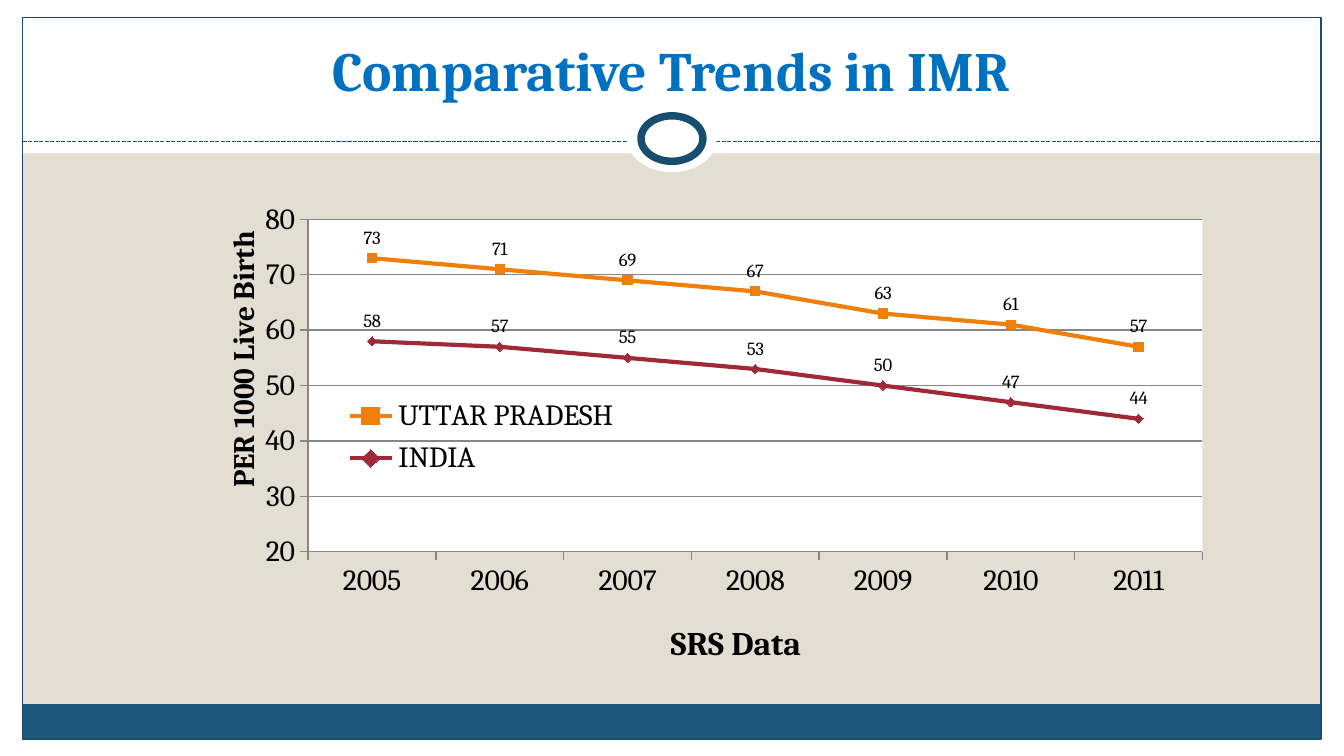
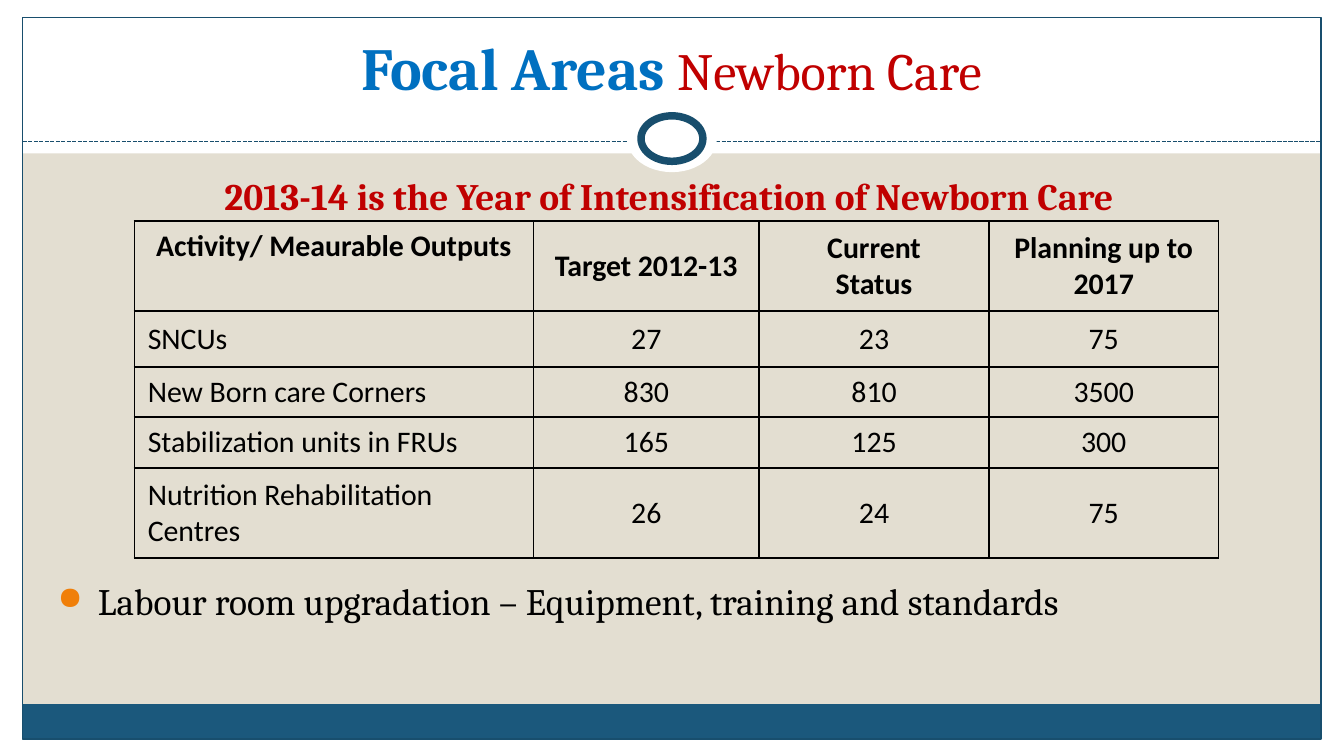
import pptx
import pptx.chart.data
import pptx.dml.color
import pptx.enum.chart
import pptx.enum.dml
import pptx.enum.shapes
import pptx.enum.text
import pptx.oxml
import pptx.oxml.ns
import pptx.util

Cm = pptx.util.Cm
Pt = pptx.util.Pt
RGB = pptx.dml.color.RGBColor
qn = pptx.oxml.ns.qn
Shape = pptx.enum.shapes.MSO_SHAPE
Align = pptx.enum.text.PP_ALIGN
Anchor = pptx.enum.text.MSO_ANCHOR

SAND = RGB(0xE3, 0xDE, 0xD1)
WHITE = RGB(0xFF, 0xFF, 0xFF)
BLACK = RGB(0, 0, 0)
GRAY = RGB(0x86, 0x86, 0x86)
TEAL = RGB(0x1B, 0x58, 0x7C)
NAVY = RGB(0x18, 0x4E, 0x6D)
BLUE = RGB(0x00, 0x70, 0xC0)
RED = RGB(0xC0, 0, 0)
ORANGE = RGB(0xF0, 0x7F, 0x09)
WINE = RGB(0x9F, 0x29, 0x36)

SERIF, SANS = "Cambria", "Calibri"
WIDTH, HEIGHT = 25.4, 14.29
EDGE = 0.43
TITLE = (0.84, 0.48, 23.7, 1.58)

YEARS = [str(year) for year in range(2005, 2012)]
RATES = [
    ("UTTAR PRADESH", (73, 71, 69, 67, 63, 61, 57), ORANGE, "SQUARE"),
    ("INDIA", (58, 57, 55, 53, 50, 47, 44), WINE, "DIAMOND"),
]
ROWS = [
    ("Activity/ Meaurable Outputs", "Target 2012-13", "Current\nStatus",
     "Planning up to 2017"),
    ("SNCUs", "27", "23", "75"),
    ("New Born care Corners", "830", "810", "3500"),
    ("Stabilization units in FRUs", "165", "125", "300"),
    ("Nutrition Rehabilitation Centres", "26", "24", "75"),
]
COLS = (7.54, 4.27, 4.34, 4.34)
TALL = (1.7, 1.06, 0.94, 0.97, 1.7)


def place(box):
    return [Cm(value) for value in box]


def style(font, size, color=BLACK, bold=False, name=SERIF):
    font.name, font.size, font.bold = name, Pt(size), bold
    font.color.rgb = color


def draw(slide, kind, box, fill=None, line=None, weight=0.75):
    shape = slide.shapes.add_shape(kind, *place(box))
    shape.shadow.inherit = False
    if fill is None:
        shape.fill.background()
    else:
        shape.fill.solid()
        shape.fill.fore_color.rgb = fill
    if line is None:
        shape.line.fill.background()
    else:
        shape.line.color.rgb = line
        shape.line.width = Pt(weight)


def rule(slide, left, right, top):
    line = slide.shapes.add_connector(
        pptx.enum.shapes.MSO_CONNECTOR.STRAIGHT,
        Cm(left), Cm(top), Cm(right), Cm(top))
    line.line.color.rgb = NAVY
    line.line.width = Pt(0.75)
    line.line.dash_style = pptx.enum.dml.MSO_LINE.SQUARE_DOT
    props = line._element.spPr
    props.append(props.makeelement(qn("a:effectLst"), {}))


def ring(slide, mid, top):
    """White disc with a navy ring, centred on the given point."""
    for wide, high, line in ((1.7, 1.27, None), (1.17, 0.86, NAVY)):
        box = (mid - wide / 2, top - high / 2, wide, high)
        draw(slide, Shape.OVAL, box, WHITE, line, 4)


def frame(slide):
    """Background, white margins, footer band, rule and ring."""
    slide.background.fill.solid()
    slide.background.fill.fore_color.rgb = SAND
    for box in ((0, HEIGHT - 0.32, WIDTH, 0.32), (0, 0, WIDTH, 2.9),
                (0, 0, EDGE, HEIGHT), (WIDTH - EDGE, 0, EDGE, HEIGHT)):
        draw(slide, Shape.RECTANGLE, box, WHITE)
    inner = WIDTH - 2 * EDGE
    draw(slide, Shape.RECTANGLE, (EDGE, 13.31, inner, 0.65), TEAL)
    draw(slide, Shape.RECTANGLE, (EDGE, 0.33, inner, 13.64), line=NAVY)
    rule(slide, EDGE, WIDTH - EDGE, 2.67)
    ring(slide, WIDTH / 2, 2.62)


def write(slide, box, runs, align=Align.CENTER, anchor=Anchor.TOP, dot=None):
    """One paragraph of (text, size, colour, bold) runs, bulleted if dot."""
    frame = slide.shapes.add_textbox(*place(box)).text_frame
    frame.word_wrap = True
    frame.vertical_anchor = anchor
    para = frame.paragraphs[0]
    para.alignment = align
    if dot is not None:
        bullet(para, dot)
    for text, *look in runs:
        run = para.add_run()
        run.text = text
        style(para.font if len(runs) == 1 else run.font, *look)


def bullet(para, color):
    props = para._p.get_or_add_pPr()
    props.set("marL", str(Cm(0.76)))
    props.set("indent", str(-Cm(0.76)))
    for tag, child, value in (("a:buClr", "a:srgbClr", str(color)),
                              ("a:buSzPct", None, "85000"),
                              ("a:buChar", None, "●")):
        item = props.makeelement(qn(tag), {})
        if child:
            item.append(props.makeelement(qn(child), {"val": value}))
        else:
            item.set("char" if tag == "a:buChar" else "val", value)
        props.append(item)


def layout(node, spot, index, inner=False):
    """Fix a chart part at fractions x, y, w, h of the chart."""
    for old in node.findall(qn("c:layout")):
        node.remove(old)
    outer = node.makeelement(qn("c:layout"), {})
    hold = node.makeelement(qn("c:manualLayout"), {})
    outer.append(hold)
    marks = [("layoutTarget", "inner")] if inner else []
    marks += [("xMode", "edge"), ("yMode", "edge")]
    marks += [(key, str(value)) for key, value in zip("xywh", spot)]
    for key, value in marks:
        hold.append(node.makeelement(qn("c:" + key), {"val": value}))
    node.insert(index, outer)


def label(axis, text, size, spot, turn=0):
    frame = axis.axis_title.text_frame
    frame.text = text
    style(frame.paragraphs[0].font, size, bold=True)
    body = frame._txBody.find(qn("a:bodyPr"))
    body.set("rot", str(turn * 60000))
    body.set("vert", "horz")
    layout(axis.axis_title._element, spot, 1)


def trend(slide, box):
    """Line chart of both rates."""
    data = pptx.chart.data.CategoryChartData()
    data.categories = YEARS
    for name, rates, *_ in RATES:
        data.add_series(name, rates)
    enum = pptx.enum.chart
    chart = slide.shapes.add_chart(
        enum.XL_CHART_TYPE.LINE_MARKERS, *place(box), data).chart
    chart.has_title = False
    style(chart.font, 10)
    for series, (_, _, color, mark) in zip(chart.plots[0].series, RATES):
        series.smooth = False
        series.format.line.color.rgb = color
        series.format.line.width = Pt(2.25)
        series.marker.style = enum.XL_MARKER_STYLE[mark]
        series.marker.size = 5
        series.marker.format.fill.solid()
        series.marker.format.fill.fore_color.rgb = color
        series.marker.format.line.color.rgb = color
        tags = series.data_labels
        tags.show_value = True
        tags.position = enum.XL_LABEL_POSITION.ABOVE
        style(tags.font, 10)
    chart.plots[0].vary_by_categories = False

    base, scale = chart.category_axis, chart.value_axis
    scale.minimum_scale, scale.maximum_scale = 20, 80
    scale.major_unit = 10
    scale.has_major_gridlines = True
    for part in (base, scale, scale.major_gridlines):
        part.format.line.color.rgb = GRAY
        part.format.line.width = Pt(0.75)
    for axis in (base, scale):
        axis.major_tick_mark = enum.XL_TICK_MARK.OUTSIDE
        style(axis.tick_labels.font, 16)
    label(base, "SRS Data", 18, (0.465, 0.89))
    label(scale, "PER 1000 Live Birth", 16, (0.027, 0.065), -90)

    chart.has_legend = True
    key = chart.legend
    key.position = enum.XL_LEGEND_POSITION.CORNER
    key.include_in_layout = True
    style(key.font, 16)
    layout(key._element, (0.14, 0.41, 0.29, 0.2), 1)

    plot = chart.element.find(".//" + qn("c:plotArea"))
    layout(plot, (0.115, 0.044, 0.878, 0.711), 0, True)
    plot.append(pptx.oxml.parse_xml(
        f'<c:spPr {pptx.oxml.ns.nsdecls("c", "a")}><a:solidFill>'
        f'<a:srgbClr val="{WHITE}"/></a:solidFill></c:spPr>'))


def border(cell):
    props = cell._tc.get_or_add_tcPr()
    for index, side in enumerate("LRTB"):
        props.insert(index, pptx.oxml.parse_xml(
            f'<a:ln{side} {pptx.oxml.ns.nsdecls("a")} w="{Pt(1)}">'
            f'<a:solidFill><a:srgbClr val="{BLACK}"/></a:solidFill>'
            f'</a:ln{side}>'))


def grid(slide, left, top):
    """Table of targets, status and plans."""
    box = place((left, top, sum(COLS), sum(TALL)))
    table = slide.shapes.add_table(len(ROWS), len(COLS), *box).table
    table.first_row = table.horz_banding = False
    for col, wide in zip(table.columns, COLS):
        col.width = Cm(wide)
    for i, (row, high) in enumerate(zip(ROWS, TALL)):
        table.rows[i].height = Cm(high)
        for j, text in enumerate(row):
            cell = table.cell(i, j)
            cell.text = text
            cell.fill.background()
            border(cell)
            first = i == j == 0
            cell.vertical_anchor = Anchor.TOP if first else Anchor.MIDDLE
            for para in cell.text_frame.paragraphs:
                para.alignment = Align.LEFT if i and not j else Align.CENTER
                style(para.font, 16, bold=i == 0, name=SANS)


def start(deck, runs):
    """New slide with the shared frame and a title."""
    slide = deck.slides.add_slide(deck.slide_layouts[6])
    frame(slide)
    write(slide, TITLE, runs, anchor=Anchor.BOTTOM)
    return slide


def rates(deck):
    slide = start(deck, [("Comparative Trends in IMR", 29.7, BLUE, True)])
    trend(slide, (3.61, 3.76, 19.25, 8.97))


def focus(deck):
    slide = start(deck, [("Focal Areas", 32, BLUE, True),
                         (" Newborn Care", 28, RED, False)])
    left, wide = 0.84, 23.62
    head = "2013-14 is the Year of Intensification of Newborn Care"
    write(slide, (left, 3.15, wide, 1.1), [(head, 20, RED, True)])
    grid(slide, 2.54, 4.18)
    note = "Labour room upgradation – Equipment, training and standards"
    write(slide, (left, 10.8, wide, 1.1), [(note, 20, BLACK, False)],
          Align.LEFT, dot=ORANGE)


def main():
    deck = pptx.Presentation()
    deck.slide_width, deck.slide_height = Cm(WIDTH), Cm(HEIGHT)
    rates(deck)
    focus(deck)
    deck.save("out.pptx")


if __name__ == "__main__":
    main()
